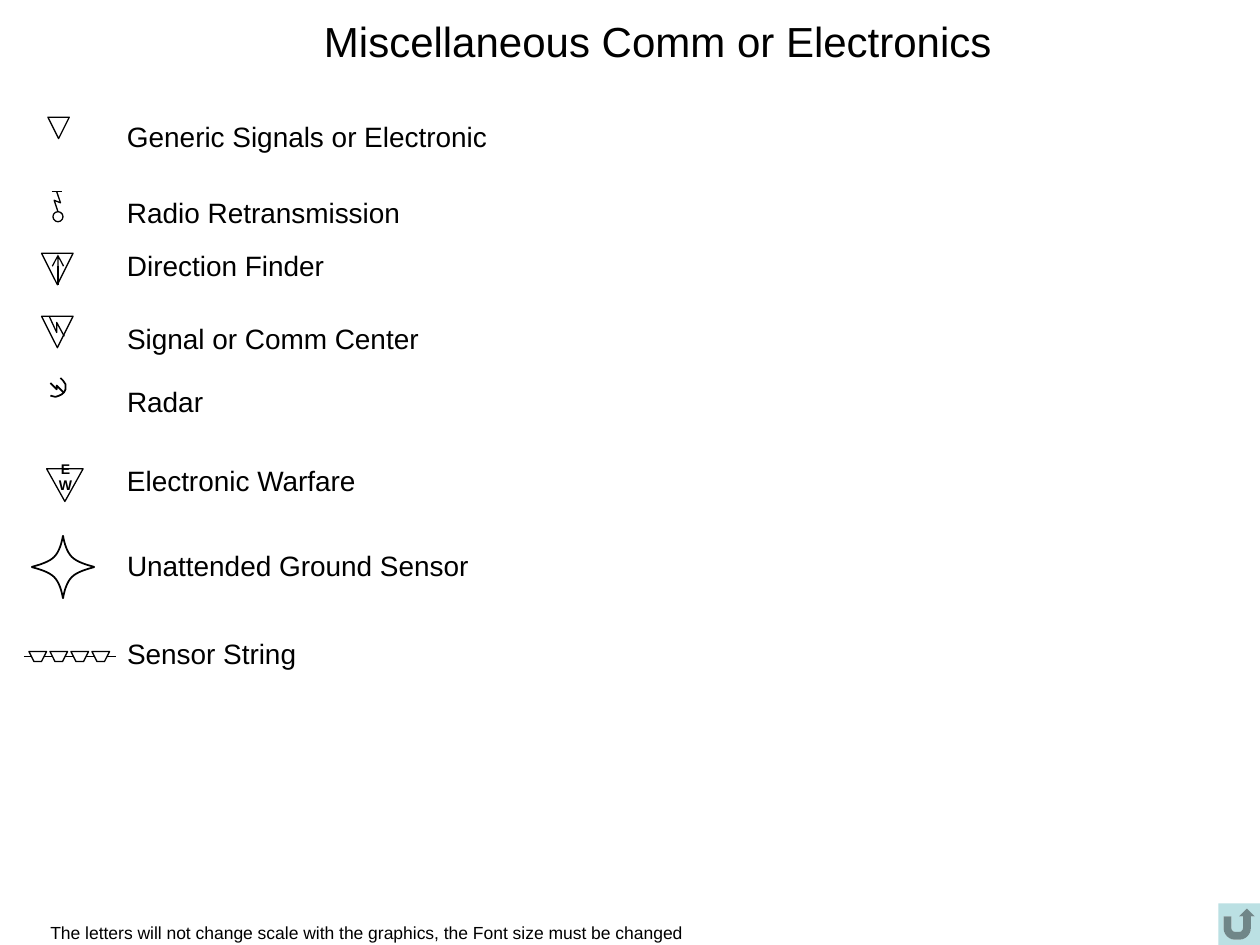
import pptx
import pptx.util
import pptx.dml.color
import pptx.enum.shapes
import pptx.enum.text
import pptx.oxml.ns
from dataclasses import dataclass
from lxml import etree

Inches = pptx.util.Inches
Kind = pptx.enum.shapes.MSO_SHAPE
Align = pptx.enum.text.PP_ALIGN
Anchor = pptx.enum.text.MSO_ANCHOR
Fit = pptx.enum.text.MSO_AUTO_SIZE
qn = pptx.oxml.ns.qn


@dataclass(frozen=True)
class Theme:
    font: str = "Arial"
    ink: str = "000000"
    paper: str = "FFFFFF"
    teal: str = "BBE0E3"
    title: int = 24
    label: int = 16
    note: int = 10
    mark: int = 8
    thin: float = 0.75
    bold: float = 1


def tint(code):
    return pptx.dml.color.RGBColor.from_string(code)


def write(frame, text, font, size, color, bold=False, align=Align.LEFT,
          anchor=Anchor.MIDDLE, wrap=True, inset=None, fit=Fit.NONE):
    frame.word_wrap = wrap
    frame.auto_size = fit
    frame.vertical_anchor = anchor
    if inset is not None:
        frame.margin_left = frame.margin_right = Inches(inset)
        frame.margin_top = frame.margin_bottom = Inches(inset)
    para = frame.paragraphs[0]
    para.alignment = align
    run = para.add_run()
    run.text = text
    run.font.name = font
    run.font.size = pptx.util.Pt(size)
    run.font.bold = bold
    run.font.color.rgb = tint(color)


def curve(a, b, c, d, steps=8):
    points = []
    for i in range(steps + 1):
        t = i / steps
        s = 1 - t
        points.append(tuple(
            s**3 * p + 3 * s * s * t * q + 3 * s * t * t * r + t**3 * e
            for p, q, r, e in zip(a, b, c, d)))
    return points


class Board:
    def __init__(self, slide, theme):
        self.slide = slide
        self.theme = theme

    def group(self):
        return self.slide.shapes.add_group_shape().shapes

    def style(self, shape, fill=None, width=None):
        shape.shadow.inherit = False
        if fill:
            shape.fill.solid()
            shape.fill.fore_color.rgb = tint(fill)
        else:
            shape.fill.background()
        if width:
            shape.line.color.rgb = tint(self.theme.ink)
            shape.line.width = pptx.util.Pt(width)
        else:
            shape.line.fill.background()
        return shape

    def shape(self, home, kind, box, fill=None, width=None):
        return self.style(home.add_shape(kind, *map(Inches, box)), fill, width)

    def wedge(self, home, box):
        self.shape(home, Kind.ISOSCELES_TRIANGLE, box,
                   width=self.theme.thin).rotation = 180

    def trace(self, home, points, width, fill=None, close=False):
        spots = [(Inches(x), Inches(y)) for x, y in points]
        pen = home.build_freeform(*spots[0])
        pen.add_line_segments(spots[1:], close=close)
        self.style(pen.convert_to_shape(), fill, width)

    def line(self, home, start, end, arrow=False):
        link = home.add_connector(pptx.enum.shapes.MSO_CONNECTOR.STRAIGHT,
                                  *map(Inches, start + end))
        link.line.color.rgb = tint(self.theme.ink)
        link.line.width = pptx.util.Pt(self.theme.thin)
        if arrow:
            etree.SubElement(link.line._get_or_add_ln(), qn("a:tailEnd"),
                             type="arrow")
        etree.SubElement(link._element.spPr, qn("a:effectLst"))

    def text(self, home, text, box, size, **fmt):
        frame = home.add_textbox(*map(Inches, box)).text_frame
        write(frame, text, self.theme.font, size, self.theme.ink, **fmt)

    def title(self, text, box):
        head = self.slide.shapes.title
        head.left, head.top, head.width, head.height = map(Inches, box)
        write(head.text_frame, text, self.theme.font, self.theme.title,
              self.theme.ink, align=Align.CENTER)


LABELS = [
    ("Generic Signals or Electronic", 0.9, 3.06),
    ("Radio Retransmission", 1.5, 2.37),
    ("Direction Finder", 1.92, 1.77),
    ("Signal or Comm Center", 2.5, 2.52),
    ("Radar", 3, 0.81),
    ("Electronic Warfare", 3.63, 2.03),
    ("Unattended Ground Sensor", 4.3, 2.92),
    ("Sensor String", 5, 1.55),
]


def main():
    deck = pptx.Presentation()
    deck.slide_width, deck.slide_height = Inches(10), Inches(7.5)
    theme = Theme()
    board = Board(deck.slides.add_slide(deck.slide_layouts[5]), theme)
    base = board.slide.shapes

    board.title("Miscellaneous Comm or Electronics", (0.97, 0, 8.5, 0.64))
    for text, top, width in LABELS:
        board.text(base, text, (0.91, top, width, 0.37), theme.label,
                   wrap=False, fit=Fit.SHAPE_TO_FIT_TEXT)

    board.wedge(base, (0.38, 0.93, 0.17, 0.17))

    radio = board.group()
    board.shape(radio, Kind.OVAL, (0.42, 1.68, 0.08, 0.08), width=theme.thin)
    board.line(radio, (0.41, 1.52), (0.49, 1.52))
    board.trace(radio, [(0.45, 1.52), (0.48, 1.61), (0.43, 1.59),
                        (0.46, 1.68)], theme.thin)

    finder = board.group()
    board.wedge(finder, (0.33, 2.01, 0.25, 0.25))
    board.line(finder, (0.46, 2.26), (0.46, 2.02), arrow=True)

    center = board.group()
    board.wedge(center, (0.33, 2.51, 0.25, 0.25))
    board.trace(center, [(0.39, 2.51), (0.45, 2.64), (0.45, 2.56),
                         (0.51, 2.67)], theme.thin)

    radar = board.group()
    board.trace(radar, [(0.4, 3.14), (0.44, 3.15), (0.47, 3.14), (0.49, 3.13),
                        (0.51, 3.11), (0.52, 3.09), (0.52, 3.05),
                        (0.5, 3.02), (0.48, 3)], theme.bold)
    board.trace(radar, [(0.51, 3.12), (0.45, 3.06), (0.45, 3.09),
                        (0.4, 3.04)], theme.bold)

    war = board.group()
    board.wedge(war, (0.37, 3.72, 0.29, 0.26))
    board.text(war, "EW", (0.45, 3.72, 0.14, 0.13), theme.mark, bold=True,
               align=Align.CENTER, inset=0)

    star = board.group()
    for down in (-1, 1):
        for side in (1, -1):
            arm = curve((0, 0.25), (0.01, 0.19), (0.03, 0.12), (0.07, 0.08))
            arm += curve((0.07, 0.08), (0.11, 0.04), (0.18, 0.02),
                         (0.25, 0))[1:]
            board.trace(star, [(0.5 + side * x, 4.5 + down * y)
                               for x, y in arm], theme.bold)

    chain = board.group()
    board.line(chain, (0.19, 5.21), (0.92, 5.21))
    for i in range(4):
        left = 0.23 + i * 0.5 / 3
        board.trace(chain, [(left, 5.17), (left + 0.04, 5.25),
                            (left + 0.1, 5.25), (left + 0.14, 5.17)],
                    theme.thin, fill=theme.paper, close=True)

    board.shape(base, Kind.ACTION_BUTTON_RETURN, (9.67, 7.17, 0.33, 0.33),
                fill=theme.teal)
    board.text(base, "The letters will not change scale with the graphics, "
               "the Font size must be changed", (0.4, 7.32, 7.27, 0.17),
               theme.note, anchor=Anchor.TOP, inset=0,
               fit=Fit.SHAPE_TO_FIT_TEXT)
    deck.save("out.pptx")


if __name__ == "__main__":
    main()
